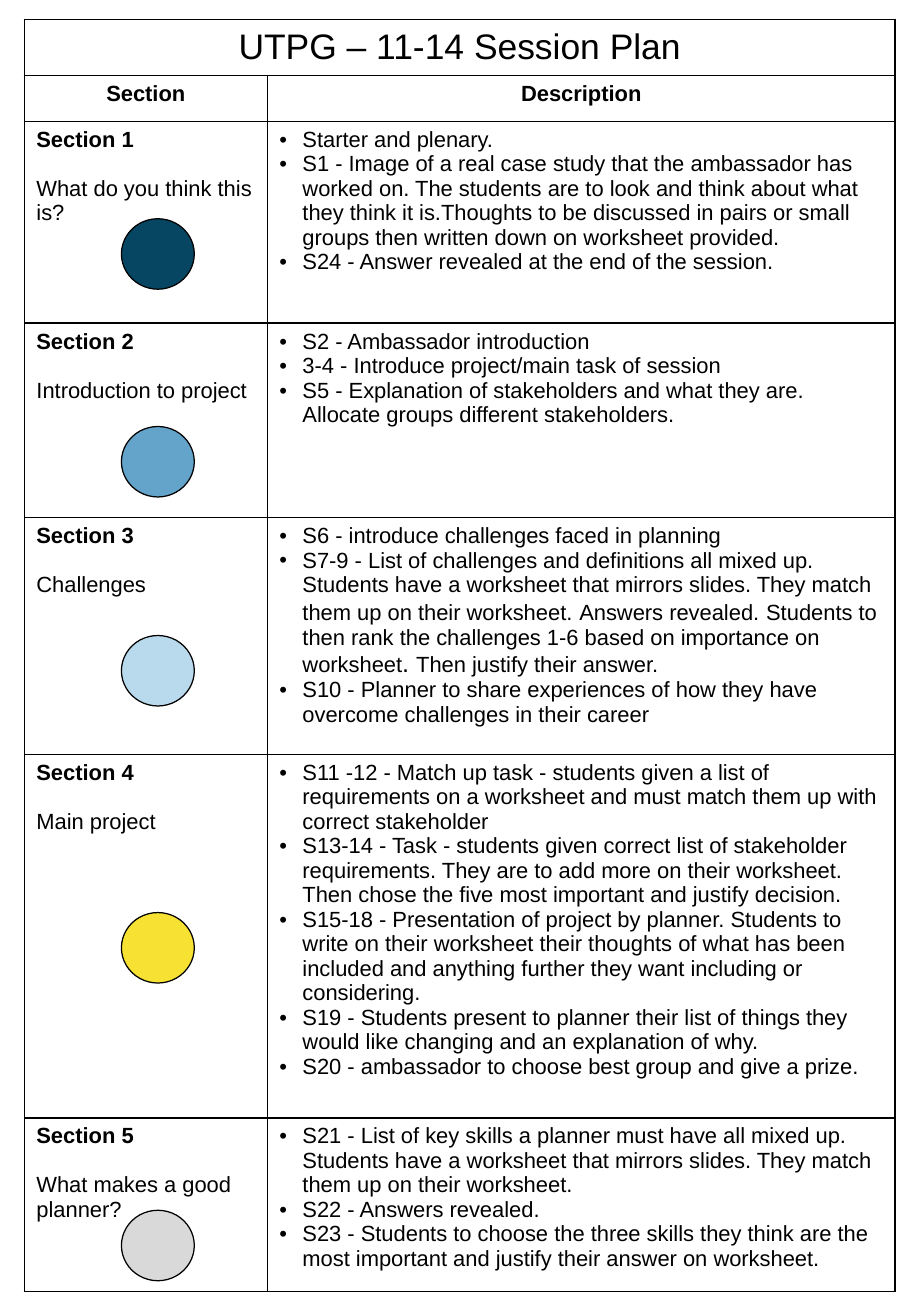
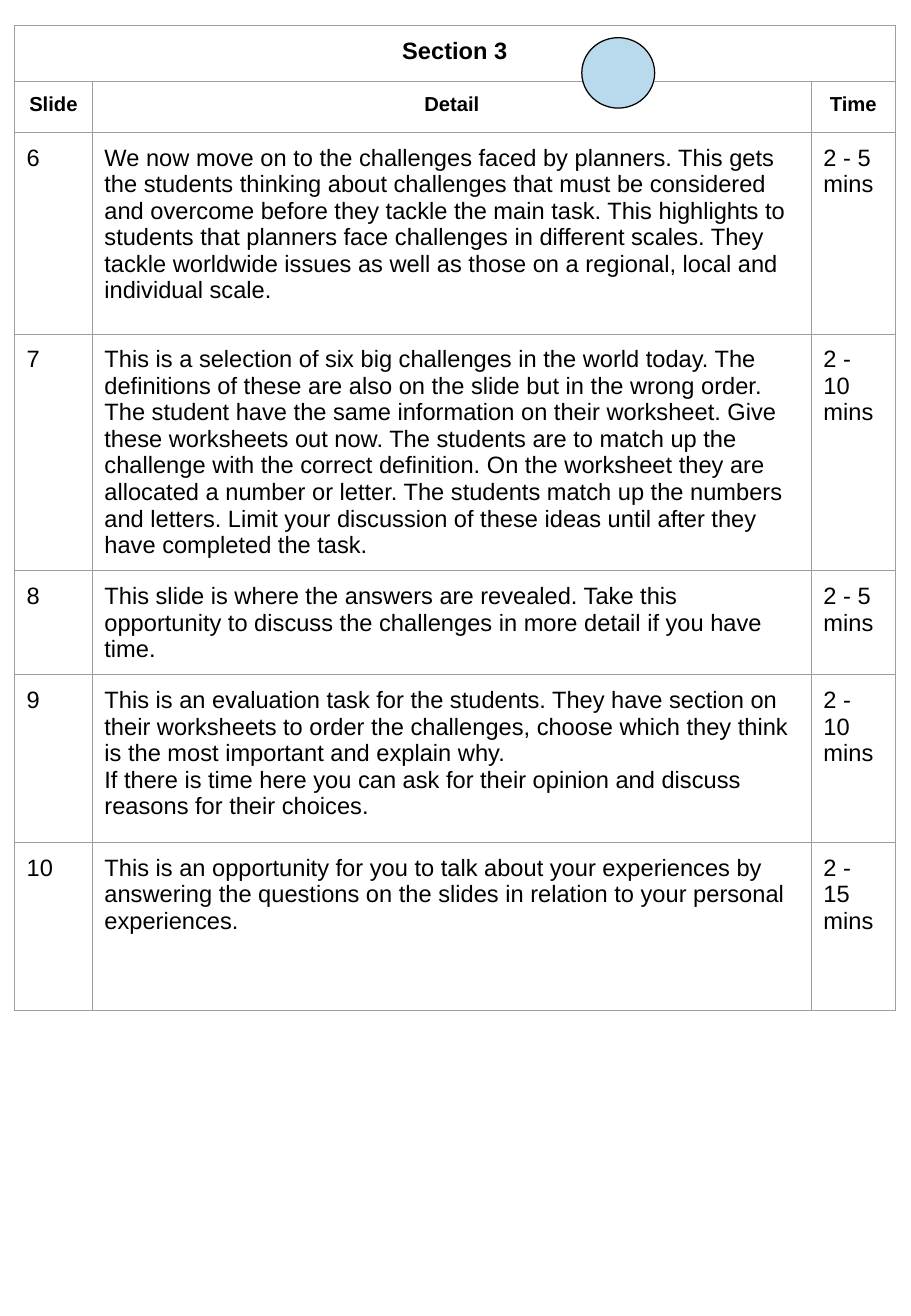
from lxml.etree import SubElement
from pptx import Presentation
from pptx.dml.color import RGBColor
from pptx.enum.shapes import MSO_SHAPE
from pptx.enum.text import MSO_ANCHOR, PP_ALIGN
from pptx.oxml.ns import qn
from pptx.util import Inches, Pt

COLORS = {
    "text": "000000", "paper": "FFFFFF", "grid": "9E9E9E",
    "starter": "064662", "introduction": "64A4CA", "challenges": "B9D9EC",
    "project": "F7E234", "skills": "D9D9D9",
}
FONT = "Arial"
MARKER_SIZE = (0.6, 0.58)
BODY, LARGE = 13, 15

PLAN_TITLE = "UTPG – 11-14 Session Plan"
PLAN_HEADINGS = ("Section", "Description")
PLAN_COLUMNS = (2, 5.17)
PLAN_ROWS = (0.46, 0.38, 1.66, 1.6, 1.95, 2.99, 1.43)
# "|" switches between body and large text
SECTIONS = [
    ("Section 1", "What do you think this is?", "starter", 1.8, [
        "Starter and plenary.",
        "S1 - Image of a real case study that the ambassador has worked on. The students are to look and think about what they think it is.Thoughts to be discussed in pairs or small groups then written down on worksheet provided.",
        "S24 - Answer revealed at the end of the session.",
    ]),
    ("Section 2", "Introduction to project", "introduction", 3.51, [
        "S2 - Ambassador introduction",
        "3-4 - Introduce project/main task of session",
        "S5 - Explanation of stakeholders and what they are. Allocate groups different stakeholders.",
    ]),
    ("Section 3", "Challenges", "challenges", 5.23, [
        "S6 - introduce challenges faced in planning",
        "S7-9 - List of challenges and definitions all mixed up. Students have a worksheet that mirrors slides. They match them up on their worksheet.| |Answers revealed.| |Students to then rank the challenges 1-6 based on importance on worksheet|. |Then justify their answer.",
        "S10 - Planner to share experiences of how they have overcome challenges in their career",
    ]),
    ("Section 4", "Main project", "project", 7.51, [
        "S11 -12 - Match up task - students given a list of requirements on a worksheet and must match them up with correct stakeholder",
        "S13-14 - Task - students given correct list of stakeholder requirements. They are to add more on their worksheet. Then chose the five most important and justify decision.",
        "S15-18 - Presentation of project by planner. Students to write on their worksheet their thoughts of what has been included and anything further they want including or considering.",
        "S19 - Students present to planner their list of things they would like changing and an explanation of why.",
        "S20 - ambassador to choose best group and give a prize.",
    ]),
    ("Section 5", "What makes a good planner?", "skills", 9.96, [
        "S21 - List of key skills a planner must have all mixed up. Students have a worksheet that mirrors slides. They match them up on their worksheet.",
        "S22 - Answers revealed.",
        "S23 - Students to choose the three skills they think are the most important and justify their answer on worksheet.",
    ]),
]

DETAIL_TITLE = "Section 3"
DETAIL_HEADINGS = ("Slide", "Detail", "Time")
DETAIL_COLUMNS = (0.64, 5.92, 0.69)
DETAIL_ROWS = (0.46, 0.42, 1.66, 1.57, 0.64, 1.38, 1.38)
STEPS = [
    ("6", ["We now move on to the challenges faced by planners. This gets the students thinking about challenges that must be considered and overcome before they tackle the main task. This highlights to students that planners face challenges in different scales. They tackle worldwide issues as well as those on a regional, local and individual scale."], "2 - 5 mins"),
    ("7", ["This is a selection of six big challenges in the world today. The definitions of these are also on the slide but in the wrong order. The student have the same information on their worksheet. Give these worksheets out now. The students are to match up the challenge with the correct definition. On the worksheet they are allocated a number or letter. The students match up the numbers and letters. Limit your discussion of these ideas until after they have completed the task."], "2 - 10 mins"),
    ("8", ["This slide is where the answers are revealed. Take this opportunity to discuss the challenges in more detail if you have time."], "2 - 5 mins"),
    ("9", ["This is an evaluation task for the students. They have section on their worksheets to order the challenges, choose which they think is the most important and explain why.",
           "If there is time here you can ask for their opinion and discuss reasons for their choices."], "2 - 10 mins"),
    ("10", ["This is an opportunity for you to talk about your experiences by answering the questions on the slides in relation to your personal experiences."], "2 - 15 mins"),
]


def rgb(name):
    return RGBColor.from_string(COLORS[name])


def add_border(cell, color, width):
    properties = cell._tc.get_or_add_tcPr()
    for side in ("a:lnL", "a:lnR", "a:lnT", "a:lnB"):
        line = SubElement(properties, qn(side), w=str(Pt(width)))
        fill = SubElement(line, qn("a:solidFill"))
        SubElement(fill, qn("a:srgbClr"), val=COLORS[color])


def add_bullet(paragraph):
    properties = paragraph._p.get_or_add_pPr()
    properties.set("marL", str(Inches(0.19)))
    properties.set("indent", str(-Inches(0.19)))
    color = SubElement(properties, qn("a:buClr"))
    SubElement(color, qn("a:srgbClr"), val=COLORS["text"])
    SubElement(properties, qn("a:buFont"), typeface=FONT)
    SubElement(properties, qn("a:buChar"), char="•")


def write(cell, texts, size, bold=False, align=PP_ALIGN.LEFT, bullets=False):
    frame = cell.text_frame
    for index, text in enumerate(texts):
        paragraph = frame.add_paragraph() if index else frame.paragraphs[0]
        paragraph.alignment = align
        if bullets:
            add_bullet(paragraph)
        font = paragraph.font
        font.name, font.size, font.bold = FONT, Pt(size), bold
        font.color.rgb = rgb("text")
        for position, piece in enumerate(text.split("|")):
            run = paragraph.add_run()
            run.text = piece
            if position % 2:
                run.font.size = Pt(LARGE)


def add_grid(slide, left, top, columns, rows, border, margin, fill=None):
    table = slide.shapes.add_table(
        len(rows), len(columns), Inches(left), Inches(top),
        Inches(sum(columns)), Inches(sum(rows))).table
    table.first_row = table.horz_banding = False
    for column, width in zip(table.columns, columns):
        column.width = Inches(width)
    for row, height in zip(table.rows, rows):
        row.height = Inches(height)
    for cell in table.iter_cells():
        cell.margin_left = cell.margin_right = Inches(0.1)
        cell.margin_top = cell.margin_bottom = Inches(margin)
        add_border(cell, *border)
        if fill:
            cell.fill.solid()
            cell.fill.fore_color.rgb = rgb(fill)
        else:
            cell.fill.background()
    table.cell(0, 0).merge(table.cell(0, len(columns) - 1))
    return table


def write_headings(table, title, title_size, title_bold, headings, size):
    write(table.cell(0, 0), [title], title_size, title_bold, PP_ALIGN.CENTER)
    for column, heading in enumerate(headings):
        write(table.cell(1, column), [heading], size, True, PP_ALIGN.CENTER)


def add_marker(slide, left, top, color):
    marker = slide.shapes.add_shape(
        MSO_SHAPE.OVAL, Inches(left), Inches(top), *map(Inches, MARKER_SIZE))
    marker.shadow.inherit = False
    marker.fill.solid()
    marker.fill.fore_color.rgb = rgb(color)
    marker.line.color.rgb = rgb("text")
    marker.line.width = Pt(0.75)


def build_plan(slide):
    table = add_grid(slide, 0.2, 0.16, PLAN_COLUMNS, PLAN_ROWS,
                     ("text", 1), 0.05, "paper")
    write_headings(table, PLAN_TITLE, 21, False, PLAN_HEADINGS, BODY)
    table.cell(0, 0).vertical_anchor = MSO_ANCHOR.MIDDLE
    for row, (name, topic, color, top, points) in enumerate(SECTIONS, 2):
        section = table.cell(row, 0)
        write(section, [name, topic], BODY)
        heading = section.text_frame.paragraphs[0]
        heading.font.bold = True
        heading.space_after = Pt(14.5)
        write(table.cell(row, 1), points, BODY, bullets=True)
        add_marker(slide, 1, top, color)


def build_detail(slide):
    table = add_grid(slide, 0.12, 0.21, DETAIL_COLUMNS, DETAIL_ROWS,
                     ("grid", 0.75), 0.1)
    write_headings(table, DETAIL_TITLE, 14, True, DETAIL_HEADINGS, 12)
    for row, (number, details, time) in enumerate(STEPS, 2):
        for column, texts in enumerate(([number], details, [time])):
            write(table.cell(row, column), texts, 14)
    add_marker(slide, 4.79, 0.31, "challenges")


def main():
    deck = Presentation()
    deck.slide_width, deck.slide_height = Inches(7.5), Inches(10.83)
    for build in (build_plan, build_detail):
        build(deck.slides.add_slide(deck.slide_layouts[6]))
    deck.save("out.pptx")


if __name__ == "__main__":
    main()
